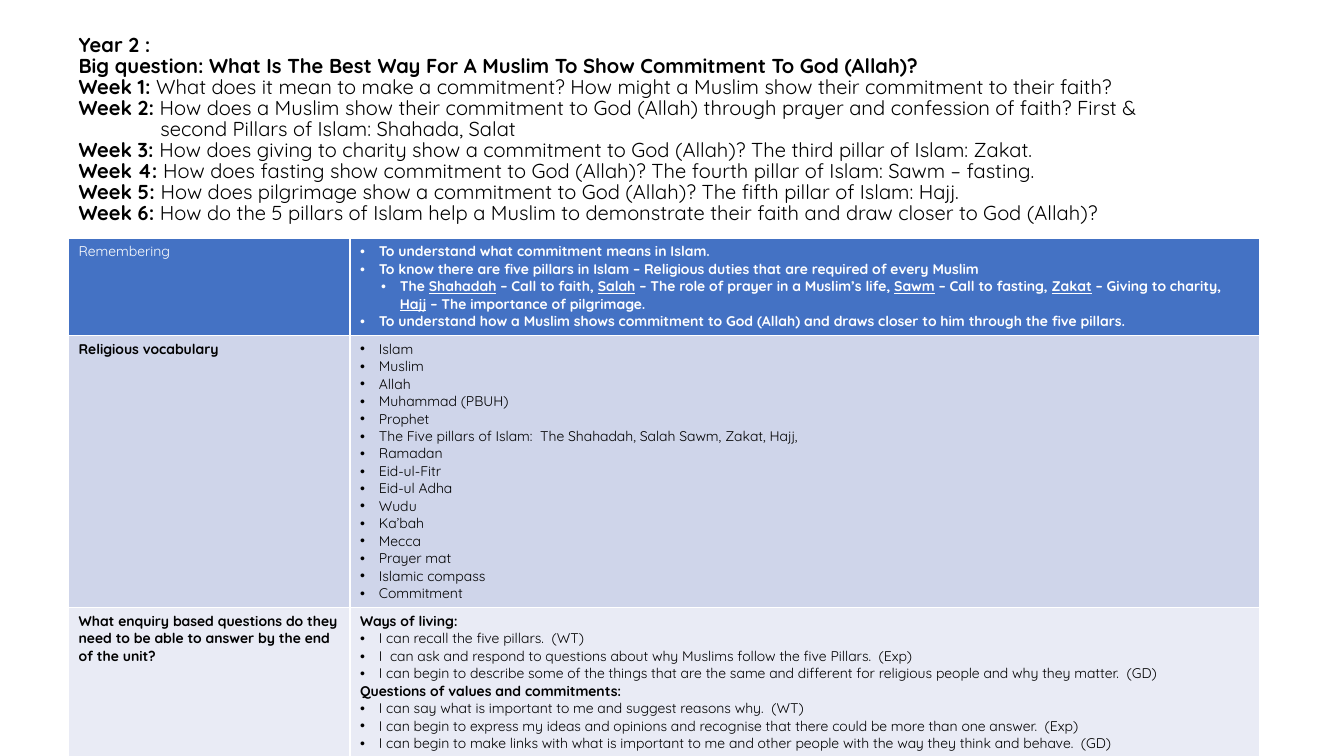
import dataclasses

import pptx
import pptx.dml.color
import pptx.enum.text
import pptx.oxml
import pptx.oxml.ns
import pptx.util
import lxml.etree

Pt = pptx.util.Pt


@dataclasses.dataclass(frozen=True)
class Theme:
    font: str = "Quicksand"
    heading_size: float = 14.4
    table_size: float = 10
    black: str = "000000"
    white: str = "FFFFFF"
    blue: str = "4472C4"
    mid_blue: str = "CFD5EA"
    pale_blue: str = "E9EBF5"


THEME = Theme()

HEADING = [
    ("Year 2 :", ""),
    ("Big question: What Is The Best Way For A Muslim To Show Commitment To God (Allah)?", ""),
    ("Week 1: ", "What does it mean to make a commitment? How might a Muslim show their commitment to their faith?"),
    ("Week 2: ", "How does a Muslim show their commitment to God (Allah) through prayer and confession of faith? "
                 "First & second Pillars of Islam: Shahada, Salat"),
    ("Week 3: ", "How does giving to charity show a commitment to God (Allah)? The third pillar of Islam: Zakat."),
    ("Week 4: ", "How does fasting show commitment to God (Allah)? The fourth pillar of Islam: Sawm – fasting."),
    ("Week 5: ", "How does pilgrimage show a commitment to God (Allah)? The fifth pillar of Islam: Hajj."),
    ("Week 6: ", "How do the 5 pillars of Islam help a Muslim to demonstrate their faith and draw closer to God (Allah)?"),
]

REMEMBERING = [
    (1, "To understand what commitment means in Islam."),
    (1, "To know there are five pillars in Islam – Religious duties that are required of every Muslim"),
    (2, "The _Shahadah_ – Call to faith, _Salah_ – The role of prayer in a Muslim’s life, "
        "_Sawm_ – Call to fasting, _Zakat_ – Giving to charity, _Hajj_ – The importance of pilgrimage."),
    (1, "To understand how a Muslim shows commitment to God (Allah) and draws closer to him "
        "through the five pillars."),
]

VOCABULARY = [
    "Islam", "Muslim", "Allah", "Muhammad (PBUH)", "Prophet",
    "The Five pillars of Islam:  The Shahadah, Salah Sawm, Zakat, Hajj,",
    "Ramadan", "Eid-ul-Fitr", "Eid-ul Adha", "Wudu", "Ka’bah", "Mecca",
    "Prayer mat", "Islamic compass", "Commitment",
]

QUESTIONS = [
    (0, "Ways of living:"),
    (1, "I can recall the five pillars.  (WT)"),
    (1, "I  can ask and respond to questions about why Muslims follow the five Pillars.  (Exp)"),
    (1, "I can begin to describe some of the things that are the same and different for religious people "
        "and why they matter.  (GD)"),
    (0, "Questions of values and commitments:"),
    (1, "I can say what is important to me and suggest reasons why.  (WT)"),
    (1, "I can begin to express my ideas and opinions and recognise that there could be more than one "
        "answer.  (Exp)"),
    (1, "I can begin to make links with what is important to me and other people with the way they think "
        "and behave.  (GD)"),
]


def add_run(paragraph, text, size, color, bold, underline=False):
    run = paragraph.add_run()
    run.text = text
    run.font.name = THEME.font
    run.font.size = Pt(size)
    run.font.bold = bold
    run.font.underline = underline
    run.font.color.rgb = pptx.dml.color.RGBColor.from_string(color)


def set_indent(paragraph, left, first):
    properties = paragraph._p.get_or_add_pPr()
    properties.set("marL", str(Pt(left)))
    properties.set("indent", str(Pt(first)))
    return properties


def add_bullet(paragraph, level):
    properties = set_indent(paragraph, 13.5 if level == 1 else 28.5, -13.5)
    font = lxml.etree.SubElement(properties, pptx.oxml.ns.qn("a:buFont"))
    font.set("typeface", "Arial")
    bullet = lxml.etree.SubElement(properties, pptx.oxml.ns.qn("a:buChar"))
    bullet.set("char", "•")


def paragraphs_for(text_frame, items):
    for index, item in enumerate(items):
        yield text_frame.add_paragraph() if index else text_frame.paragraphs[0], item


def add_heading(slide):
    text_frame = slide.shapes.add_textbox(Pt(49), Pt(16), Pt(810), Pt(154)).text_frame
    text_frame.word_wrap = True
    text_frame.vertical_anchor = pptx.enum.text.MSO_ANCHOR.MIDDLE
    for paragraph, (label, question) in paragraphs_for(text_frame, HEADING):
        paragraph.line_spacing = 0.87
        add_run(paragraph, label, THEME.heading_size, THEME.black, True)
        if question:
            set_indent(paragraph, 58.5, -58.5)
            add_run(paragraph, question, THEME.heading_size, THEME.black, False)


def set_borders(cell):
    properties = cell._tc.get_or_add_tcPr()
    for position, side in enumerate(("lnL", "lnR", "lnT", "lnB")):
        line = pptx.oxml.parse_xml(
            f'<a:{side} {pptx.oxml.ns.nsdecls("a")} w="{Pt(1)}"><a:solidFill>'
            f'<a:srgbClr val="{THEME.white}"/></a:solidFill></a:{side}>'
        )
        properties.insert(position, line)


def fill_cell(cell, items, fill, color, bold_levels):
    cell.fill.solid()
    cell.fill.fore_color.rgb = pptx.dml.color.RGBColor.from_string(fill)
    set_borders(cell)
    for paragraph, (level, text) in paragraphs_for(cell.text_frame, items):
        if level:
            add_bullet(paragraph, level)
        for index, part in enumerate(text.split("_")):
            add_run(paragraph, part, THEME.table_size, color, level in bold_levels, index % 2 == 1)


def add_unit_table(slide):
    rows = [
        (69.5, "Remembering", REMEMBERING, THEME.blue, THEME.white, (), (1, 2)),
        (194.5, "Religious vocabulary", [(1, word) for word in VOCABULARY],
         THEME.mid_blue, THEME.black, (0,), ()),
        (183.5, "What enquiry based questions do they need to be able to answer by the end of the unit?",
         QUESTIONS, THEME.pale_blue, THEME.black, (0,), (0,)),
    ]
    widths = (201, 649.5)
    table = slide.shapes.add_table(
        len(rows), len(widths), Pt(49), Pt(170), Pt(sum(widths)), Pt(sum(row[0] for row in rows))
    ).table
    table.first_row = False
    table.horz_banding = False
    for column, width in zip(table.columns, widths):
        column.width = Pt(width)
    for index, (height, label, items, fill, color, label_bold, item_bold) in enumerate(rows):
        table.rows[index].height = Pt(height)
        fill_cell(table.cell(index, 0), [(0, label)], fill, color, label_bold)
        fill_cell(table.cell(index, 1), items, fill, color, item_bold)


def main():
    presentation = pptx.Presentation()
    presentation.slide_width = Pt(960)
    presentation.slide_height = Pt(540)
    slide = presentation.slides.add_slide(presentation.slide_layouts[6])
    add_heading(slide)
    add_unit_table(slide)
    presentation.save("out.pptx")


if __name__ == "__main__":
    main()
